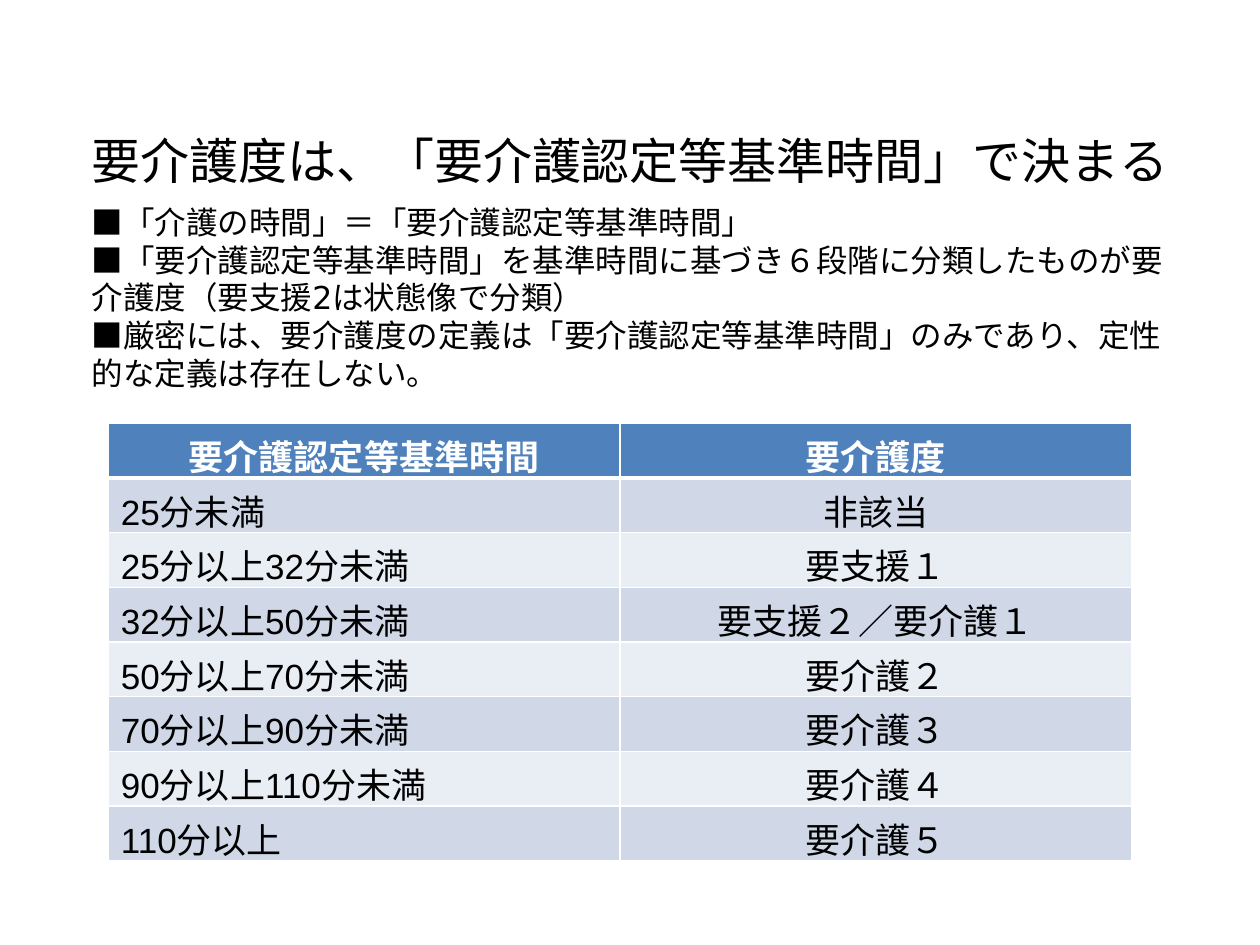
from pptx import Presentation
from pptx.dml.color import RGBColor
from pptx.enum.text import MSO_ANCHOR, PP_ALIGN
from pptx.oxml.ns import qn
from pptx.util import Inches, Pt
from lxml.etree import SubElement

COLORS = {
    "text": "000000",
    "white": "FFFFFF",
    "header": "4F81BD",
    "band_dark": "D0D8E8",
    "band_light": "E9EDF4",
}
TITLE = "要介護度は、「要介護認定等基準時間」で決まる"
POINTS = [
    "■「介護の時間」＝「要介護認定等基準時間」",
    "■「要介護認定等基準時間」を基準時間に基づき６段階に分類したものが要介護度（要支援2は状態像で分類）",
    "■厳密には、要介護度の定義は「要介護認定等基準時間」のみであり、定性的な定義は存在しない。",
]
CARE_LEVELS = [
    ("要介護認定等基準時間", "要介護度"),
    ("25分未満", "非該当"),
    ("25分以上32分未満", "要支援１"),
    ("32分以上50分未満", "要支援２／要介護１"),
    ("50分以上70分未満", "要介護２"),
    ("70分以上90分未満", "要介護３"),
    ("90分以上110分未満", "要介護４"),
    ("110分以上", "要介護５"),
]


def write_text(frame, lines, size, font, color="text", bold=False, align=PP_ALIGN.LEFT):
    """Write one paragraph for each line into a text frame."""
    for index, line in enumerate(lines):
        para = frame.paragraphs[0] if index == 0 else frame.add_paragraph()
        para.alignment = align
        span = para.add_run()
        span.text = line
        span.font.size = Pt(size)
        span.font.name = font
        span.font.bold = bold
        span.font.color.rgb = RGBColor.from_string(COLORS[color])


def add_text_region(page, box, lines, anchor=MSO_ANCHOR.TOP, **text_format):
    """Place a wrapping text box that fills the given box."""
    frame = page.shapes.add_textbox(*box).text_frame
    frame.word_wrap = True
    frame.vertical_anchor = anchor
    write_text(frame, lines, **text_format)


def set_borders(cell, bottom_width):
    """Draw white borders around a cell, with its own bottom width."""
    properties = cell._tc.get_or_add_tcPr()
    for side, width in (("L", 1), ("R", 1), ("T", 1), ("B", bottom_width)):
        line = SubElement(properties, qn(f"a:ln{side}"), w=str(Pt(width)))
        fill = SubElement(line, qn("a:solidFill"))
        SubElement(fill, qn("a:srgbClr"), val=COLORS["white"])


def add_level_table(page, box, rows):
    """Place the table of standard times and care levels in the given box."""
    table = page.shapes.add_table(len(rows), len(rows[0]), *box).table
    for row_index, row in enumerate(rows):
        is_header = row_index == 0
        band = "band_dark" if row_index % 2 else "band_light"
        for column_index, text in enumerate(row):
            cell = table.cell(row_index, column_index)
            centered = is_header or column_index == 1
            set_borders(cell, 3 if is_header else 1)
            cell.fill.solid()
            cell.fill.fore_color.rgb = RGBColor.from_string(
                COLORS["header" if is_header else band]
            )
            write_text(
                cell.text_frame,
                [text],
                size=20,
                font="Arial",
                color="white" if is_header else "text",
                bold=is_header,
                align=PP_ALIGN.CENTER if centered else PP_ALIGN.LEFT,
            )


def main():
    """Build the slide and save the deck."""
    deck = Presentation()
    deck.slide_width, deck.slide_height = Inches(10), Inches(7.5)
    page = deck.slides.add_slide(deck.slide_layouts[6])
    title_box = (Inches(0.5), Inches(0.3), Inches(9), Inches(1.25))
    points_box = (Inches(0.63), Inches(1.56), Inches(8.91), Inches(1.62))
    table_box = (Inches(0.86), Inches(3.36), Inches(8.12), Inches(3.47))
    add_text_region(
        page, title_box, [TITLE], anchor=MSO_ANCHOR.BOTTOM,
        size=28, font="Calibri", align=PP_ALIGN.CENTER,
    )
    add_text_region(page, points_box, POINTS, size=18, font="DejaVu Sans")
    add_level_table(page, table_box, CARE_LEVELS)
    deck.save("out.pptx")


if __name__ == "__main__":
    main()
